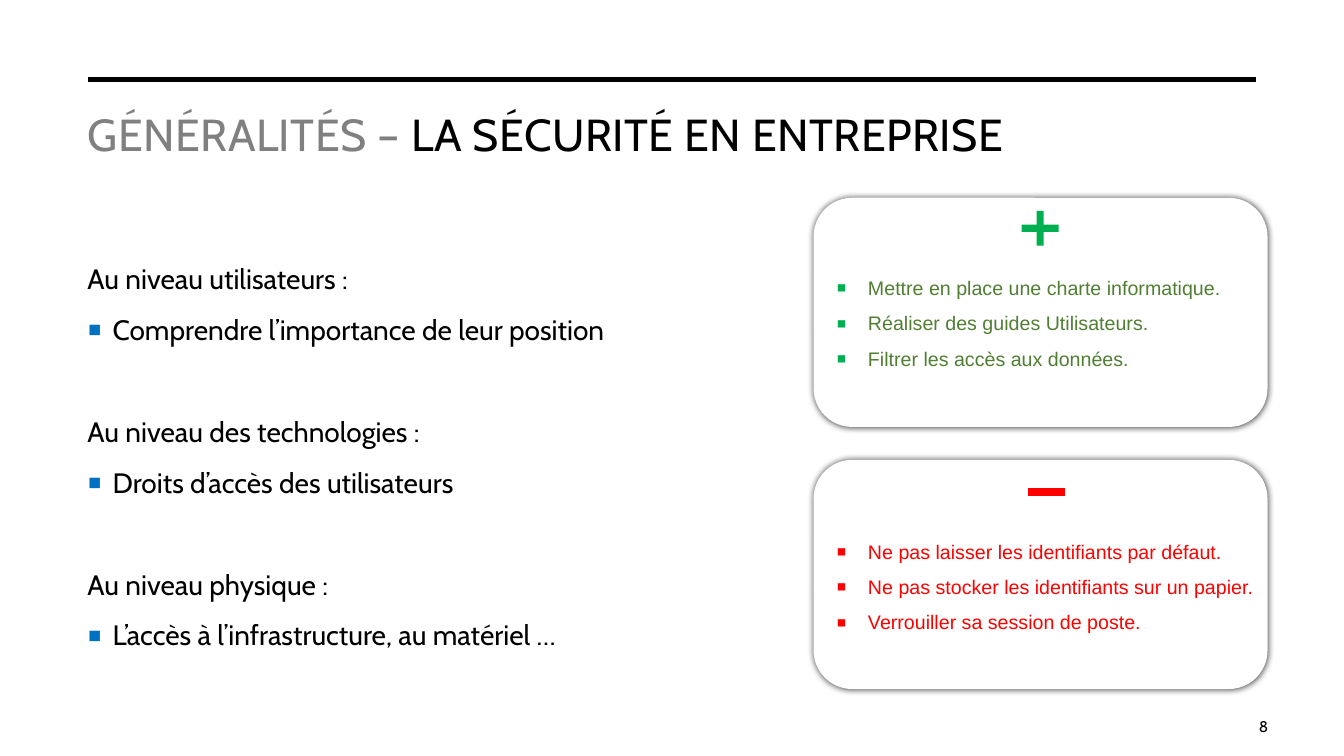
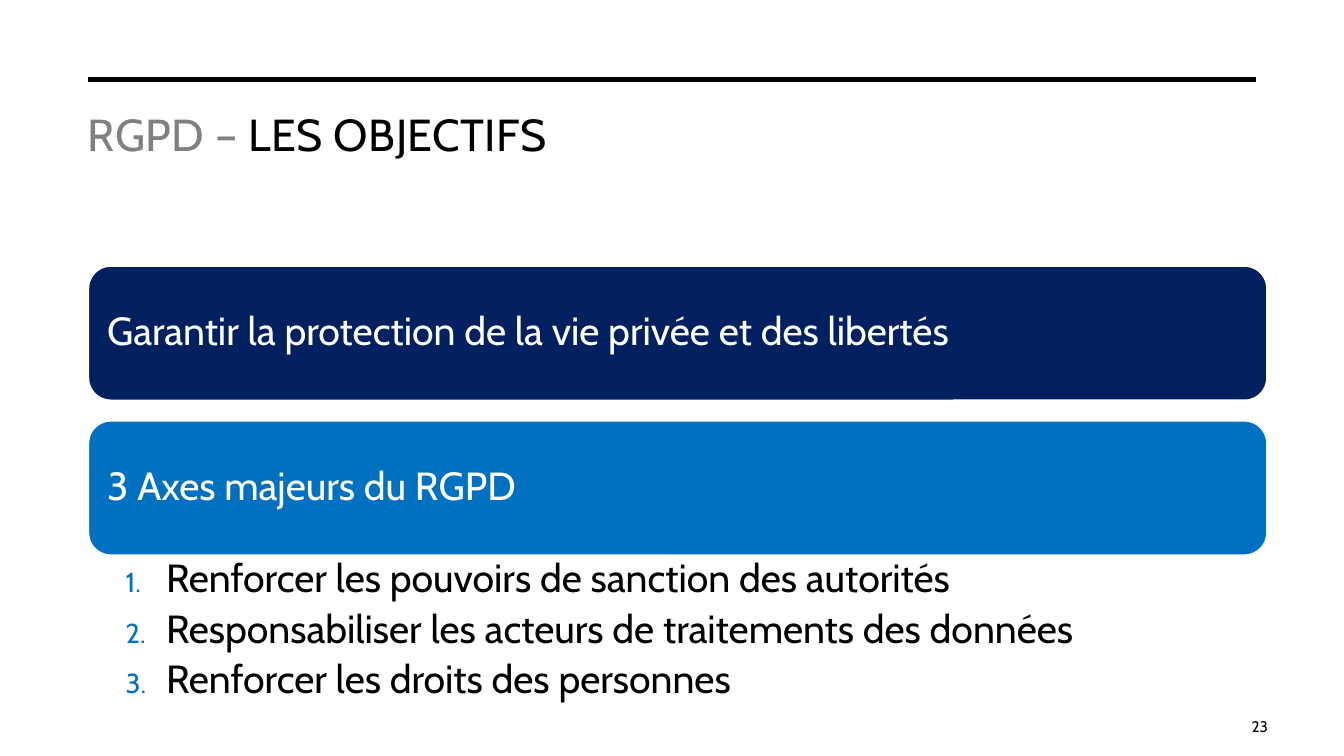
from lxml import etree
from pptx import Presentation
from pptx.dml.color import RGBColor
from pptx.enum.shapes import MSO_CONNECTOR, MSO_SHAPE
from pptx.enum.text import MSO_ANCHOR, MSO_AUTO_SIZE, PP_ALIGN
from pptx.oxml.ns import qn
from pptx.util import Pt

ROUNDED = MSO_SHAPE.ROUNDED_RECTANGLE
PLUS = MSO_SHAPE.MATH_PLUS
MINUS = MSO_SHAPE.MATH_MINUS
STRAIGHT = MSO_CONNECTOR.STRAIGHT
TOP, MIDDLE, BOTTOM = MSO_ANCHOR.TOP, MSO_ANCHOR.MIDDLE, MSO_ANCHOR.BOTTOM
LEFT, RIGHT = PP_ALIGN.LEFT, PP_ALIGN.RIGHT
NO_AUTOFIT = MSO_AUTO_SIZE.NONE
TITLE_ONLY = 5

BLACK, WHITE, GREY = "000000", "FFFFFF", "808080"
NAVY, BLUE = "002060", "0070C0"
GREEN, DARK_GREEN, RED = "00B050", "507E32", "FF0000"
TITLE_FONT, CARD_FONT = "Cabin", "Arial"
DEFAULT_INSETS = (7.2, 3.6, 7.2, 3.6)

CARD_LEFT, CARD_WIDTH, CARD_HEIGHT = 581.6, 323.3, 162.7
BAR_LEFT, BAR_WIDTH, BAR_HEIGHT = 63.2, 841.7, 95.8


def rgb(value):
    return RGBColor.from_string(value)


def points(*lengths):
    return [Pt(length) for length in lengths]


def style_run(run, size, color, font=TITLE_FONT):
    run.font.size = Pt(size)
    run.font.name = font
    run.font.color.rgb = rgb(color)


def set_frame(frame, anchor=TOP, insets=DEFAULT_INSETS):
    frame.word_wrap = True
    frame.auto_size = NO_AUTOFIT
    frame.vertical_anchor = anchor
    (frame.margin_left, frame.margin_top,
     frame.margin_right, frame.margin_bottom) = points(*insets)


def set_bullet(paragraph, indent, color, percent, numbered=False):
    properties = paragraph._p.get_or_add_pPr()
    properties.set("marL", str(Pt(indent)))
    properties.set("indent", str(-Pt(indent)))
    bullet_color = etree.SubElement(properties, qn("a:buClr"))
    etree.SubElement(bullet_color, qn("a:srgbClr"), val=color)
    etree.SubElement(properties, qn("a:buSzPct"), val=str(percent * 1000))
    if numbered:
        etree.SubElement(properties, qn("a:buFont"), typeface=TITLE_FONT)
        etree.SubElement(properties, qn("a:buAutoNum"), type="arabicPeriod")
    else:
        etree.SubElement(properties, qn("a:buFont"), typeface=CARD_FONT)
        etree.SubElement(properties, qn("a:buChar"), char="▪")


def write_lines(frame, lines, size, color, spacing, font=TITLE_FONT, align=LEFT):
    frame.text = "\n".join(lines)
    for paragraph in frame.paragraphs:
        paragraph.alignment = align
        paragraph.line_spacing = spacing
        style_run(paragraph.runs[0], size, color, font)
    return frame.paragraphs


def add_text(slide, box, lines, size, color, spacing=1.0, font=TITLE_FONT,
             align=LEFT, anchor=TOP, insets=DEFAULT_INSETS):
    frame = slide.shapes.add_textbox(*points(*box)).text_frame
    set_frame(frame, anchor, insets)
    return write_lines(frame, lines, size, color, spacing, font, align)


def add_filled(slide, preset, box, fill, outline=None):
    shape = slide.shapes.add_shape(preset, *points(*box))
    shape.shadow.inherit = False
    shape.fill.solid()
    shape.fill.fore_color.rgb = rgb(fill)
    if outline:
        shape.line.color.rgb = rgb(outline)
        shape.line.width = Pt(1)
    else:
        shape.line.fill.background()
    return shape


def add_glow_shadow(shape):
    effects = shape._element.spPr.find(qn("a:effectLst"))
    shadow = etree.SubElement(effects, qn("a:outerShdw"), blurRad=str(Pt(5)),
                              dist="0", dir="0", algn="ctr", rotWithShape="0")
    color = etree.SubElement(shadow, qn("a:srgbClr"), val=BLACK)
    etree.SubElement(color, qn("a:alpha"), val="75000")


def add_framed_slide(deck, section, subject, number):
    slide = deck.slides.add_slide(deck.slide_layouts[TITLE_ONLY])
    rule = slide.shapes.add_connector(STRAIGHT, *points(63.2, 56.9, 897.1, 56.9))
    rule.line.color.rgb = rgb(BLACK)
    rule.line.width = Pt(3.5)
    etree.SubElement(rule._element.spPr, qn("a:effectLst"))

    title = slide.shapes.title
    title.left, title.top, title.width, title.height = points(55.4, 72.7, 841.7, 108)
    set_frame(title.text_frame)
    heading = title.text_frame.paragraphs[0]
    heading.alignment = LEFT
    for text, color in ((f"{section} – ", GREY), (subject, BLACK)):
        run = heading.add_run()
        run.text = text
        style_run(run, 32, color)
        run._r.get_or_add_rPr().set("spc", "30")

    add_text(slide, (859.7, 500.4, 53.3, 28.8), [str(number)], 11, BLACK,
             align=RIGHT, anchor=BOTTOM)
    return slide


def add_levels(slide, levels):
    lines = [line for level in levels for line in level]
    paragraphs = add_text(slide, (55.4, 180.7, 841.7, 286.6), lines, 20, BLACK, 1.1)
    for index, paragraph in enumerate(paragraphs):
        if index % 2:
            set_bullet(paragraph, 18, BLUE, 150)
            paragraph.space_before = Pt(10)
        elif index:
            paragraph.space_before = Pt(46.4)


def add_card(slide, top, list_top, advice, text_color, sign_color):
    card = add_filled(slide, ROUNDED, (CARD_LEFT, top, CARD_WIDTH, CARD_HEIGHT),
                      WHITE, WHITE)
    add_glow_shadow(card)
    box = (CARD_LEFT + 8.8, list_top, CARD_WIDTH - 8.8, 80.6)
    for paragraph in add_text(slide, box, advice, 14, text_color, 1.5, CARD_FONT):
        set_bullet(paragraph, 22.5, sign_color, 150)


def add_bar(slide, top, text, fill):
    bar = add_filled(slide, ROUNDED, (BAR_LEFT, top, BAR_WIDTH, BAR_HEIGHT),
                     fill, WHITE)
    set_frame(bar.text_frame, MIDDLE, (8.6, 8.6, 8.6, 8.6))
    write_lines(bar.text_frame, [text], 28, WHITE, 0.9)[0].space_after = Pt(9.8)


def add_numbered_axes(slide, axes):
    box = (BAR_LEFT, 396.4, BAR_WIDTH, 113.8)
    for paragraph in add_text(slide, box, axes, 28, BLACK, 0.9,
                              insets=(26.6, 2.9, 15.8, 2.9)):
        set_bullet(paragraph, 28.8, BLUE, 70, numbered=True)
        paragraph.space_after = Pt(5.6)


def build_security(deck):
    slide = add_framed_slide(deck, "GÉNÉRALITÉS", "LA SÉCURITÉ EN ENTREPRISE", 8)
    add_levels(slide, [
        ("Au niveau utilisateurs :", "Comprendre l’importance de leur position"),
        ("Au niveau des technologies :", "Droits d’accès des utilisateurs"),
        ("Au niveau physique :", "L’accès à l’infrastructure, au matériel …"),
    ])
    add_card(slide, 141.8, 185.2, [
        "Mettre en place une charte informatique.",
        "Réaliser des guides Utilisateurs.",
        "Filtrer les accès aux données.",
    ], DARK_GREEN, GREEN)
    plus = add_filled(slide, PLUS, (725, 146.2, 36, 33.8), GREEN)
    plus.adjustments[0] = 0.15
    add_card(slide, 329, 373.5, [
        "Ne pas laisser les identifiants par défaut.",
        "Ne pas stocker les identifiants sur un papier.",
        "Verrouiller sa session de poste.",
    ], RED, RED)
    add_filled(slide, MINUS, (729.8, 339, 36, 25.2), RED)


def build_objectives(deck):
    slide = add_framed_slide(deck, "RGPD", "LES OBJECTIFS", 23)
    add_bar(slide, 190.1, "Garantir la protection de la vie privée et des libertés", NAVY)
    add_bar(slide, 300.7, "3 Axes majeurs du RGPD", BLUE)
    add_numbered_axes(slide, [
        "Renforcer les pouvoirs de sanction des autorités",
        "Responsabiliser les acteurs de traitements des données",
        "Renforcer les droits des personnes",
    ])


def main():
    deck = Presentation()
    deck.slide_width, deck.slide_height = points(960, 540)
    build_security(deck)
    build_objectives(deck)
    deck.save("out.pptx")


if __name__ == "__main__":
    main()
